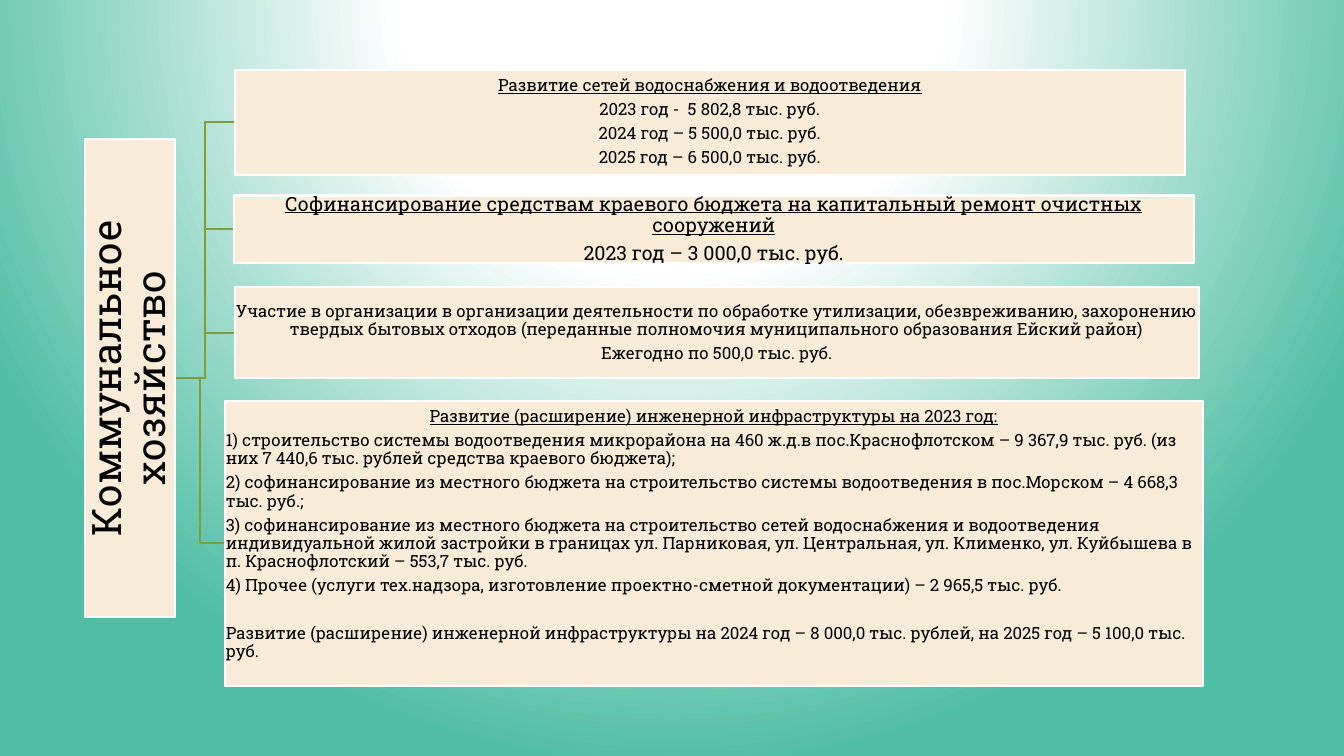
import dataclasses

import lxml.etree
import pptx
import pptx.dml.color
import pptx.enum.shapes
import pptx.enum.text
import pptx.oxml
import pptx.oxml.ns
import pptx.util

PX = 9144
ALIGN = pptx.enum.text.PP_ALIGN
ANCHOR = pptx.enum.text.MSO_ANCHOR


@dataclasses.dataclass(frozen=True)
class Theme:
    """Colours, font and type sizes of the slide."""
    font: str = "Roboto Slab"
    text: str = "000000"
    panel: str = "F8EBD8"
    border: str = "FFFFFF"
    branch: str = "7F9E36"
    glow: str = "FFFFFF"
    ground: str = "50BEA3"
    title: int = 29
    large: int = 14
    body: int = 12
    line: float = 1.5


THEME = Theme()

LABEL = "Коммунальное хозяйство"
LABEL_BOX = (84, 138, 90, 474)
PANELS = [
    ((233, 69, 942, 105), THEME.body, [
        ("Развитие сетей водоснабжения и водоотведения", {"underline": True}),
        ("2023 год -  5 802,8 тыс. руб.", {}),
        ("2024 год – 5 500,0 тыс. руб.", {}),
        ("2025 год – 6 500,0 тыс. руб.", {}),
    ]),
    ((232, 194, 952, 67), THEME.large, [
        ("Софинансирование средствам краевого бюджета на капитальный ремонт "
         "очистных сооружений", {"underline": True}),
        ("2023 год – 3 000,0 тыс. руб.", {}),
    ]),
    ((233, 285, 956, 90), THEME.body, [
        ("Участие в организации в организации деятельности по обработке утилизации, "
         "обезвреживанию, захоронению твердых бытовых отходов (переданные полномочия "
         "муниципального образования Ейский район)", {}),
        ("Ежегодно по 500,0 тыс. руб.", {}),
    ]),
]
DETAIL_BOX = (223, 398, 970, 283)
DETAIL = [
    ("Развитие (расширение) инженерной инфраструктуры на 2023 год:",
     {"underline": True, "align": ALIGN.CENTER}),
    ("1) строительство системы водоотведения микрорайона на 460 ж.д.в "
     "пос.Краснофлотском – 9 367,9 тыс. руб. (из них 7 440,6 тыс. рублей средства "
     "краевого бюджета);", {}),
    ("2) софинансирование из местного бюджета на строительство системы водоотведения "
     "в пос.Морском – 4 668,3 тыс. руб.;", {}),
    ("3) софинансирование из местного бюджета на строительство сетей водоснабжения и "
     "водоотведения индивидуальной жилой застройки в границах ул. Парниковая, "
     "ул. Центральная, ул. Клименко, ул. Куйбышева в п. Краснофлотский – "
     "553,7 тыс. руб.", {}),
    ("4) Прочее (услуги тех.надзора, изготовление проектно-сметной документации) – "
     "2 965,5 тыс. руб.", {"after": 21.3}),
    ("Развитие (расширение) инженерной инфраструктуры на 2024 год – "
     "8 000,0 тыс. рублей, на 2025 год – 5 100,0 тыс. руб.", {}),
]


def rgb(color):
    """Turn a hex string into a colour value."""
    return pptx.dml.color.RGBColor.from_string(color)


def write(p, text, size=THEME.body, align=ALIGN.CENTER, underline=False, after=None):
    """Write one formatted paragraph."""
    p.alignment = align
    p.line_spacing = 0.9
    p.space_after = pptx.util.Pt(0.35 * size if after is None else after)
    r = p.add_run()
    r.text = text
    r.font.name = THEME.font
    r.font.size = pptx.util.Pt(size)
    r.font.underline = underline
    r.font.color.rgb = rgb(THEME.text)


def paint_background(s):
    """Fill the slide with a glow that spreads from the top centre."""
    fill = s.background.fill
    fill.gradient()
    grad = s._element.find(".//" + pptx.oxml.ns.qn("p:bgPr"))[0]
    stops = "".join(
        f'<a:gs pos="{pos * 1000}"><a:srgbClr val="{color}"/></a:gs>'
        for pos, color in ((0, THEME.glow), (35, THEME.glow), (100, THEME.ground)))
    grad.getparent().replace(grad, pptx.oxml.parse_xml(
        f'<a:gradFill {pptx.oxml.ns.nsdecls("a")} rotWithShape="1">'
        f'<a:gsLst>{stops}</a:gsLst><a:path path="circle">'
        '<a:fillToRect l="50000" t="-80000" r="50000" b="180000"/>'
        '</a:path></a:gradFill>'))


def add_panel(s, box, paragraphs, size=THEME.body, align=ALIGN.CENTER,
              anchor=ANCHOR.MIDDLE, inset=1, top=1):
    """Add a bordered rectangle with its paragraphs."""
    sp = s.shapes.add_shape(pptx.enum.shapes.MSO_SHAPE.RECTANGLE, *(v * PX for v in box))
    sp.shadow.inherit = False
    sp.fill.solid()
    sp.fill.fore_color.rgb = rgb(THEME.panel)
    sp.line.color.rgb = rgb(THEME.border)
    sp.line.width = pptx.util.Pt(THEME.line)
    tf = sp.text_frame
    tf.word_wrap = True
    tf.vertical_anchor = anchor
    tf.margin_left = tf.margin_right = tf.margin_bottom = inset * PX
    tf.margin_top = top * PX
    for i, (text, style) in enumerate(paragraphs):
        p = tf.add_paragraph() if i else tf.paragraphs[0]
        write(p, text, **{"size": size, "align": align, **style})
    return sp


def add_label(s, box):
    """Add the root label, turned to read upwards inside its box."""
    x, y, w, h = box
    turned = (x + (w - h) // 2, y + (h - w) // 2, h, w)
    sp = add_panel(s, turned, [(LABEL, {})], size=THEME.title, inset=2, top=2)
    sp.rotation = 270


def add_branch(s, root, box):
    """Join the right side of the root to the left side of a panel."""
    x, y, w, h = root
    left, top, _, height = box
    ends = (x + w, y + h // 2, left, top + height // 2)
    c = s.shapes.add_connector(pptx.enum.shapes.MSO_CONNECTOR.ELBOW, *(v * PX for v in ends))
    c.line.color.rgb = rgb(THEME.branch)
    c.line.width = pptx.util.Pt(THEME.line)
    lxml.etree.SubElement(c._element.spPr, pptx.oxml.ns.qn("a:effectLst"))


def build_tree(s):
    """Build the tree of utility spending."""
    for box in [DETAIL_BOX] + [panel[0] for panel in reversed(PANELS)]:
        add_branch(s, LABEL_BOX, box)
    add_label(s, LABEL_BOX)
    for box, size, paragraphs in PANELS:
        add_panel(s, box, paragraphs, size=size)
    add_panel(s, DETAIL_BOX, DETAIL, align=ALIGN.LEFT, anchor=ANCHOR.TOP, top=7)


def main():
    """Build and save the presentation."""
    prs = pptx.Presentation()
    prs.slide_width, prs.slide_height = 1333 * PX, 750 * PX
    s = prs.slides.add_slide(prs.slide_layouts[6])
    paint_background(s)
    build_tree(s)
    prs.save("out.pptx")


if __name__ == "__main__":
    main()
